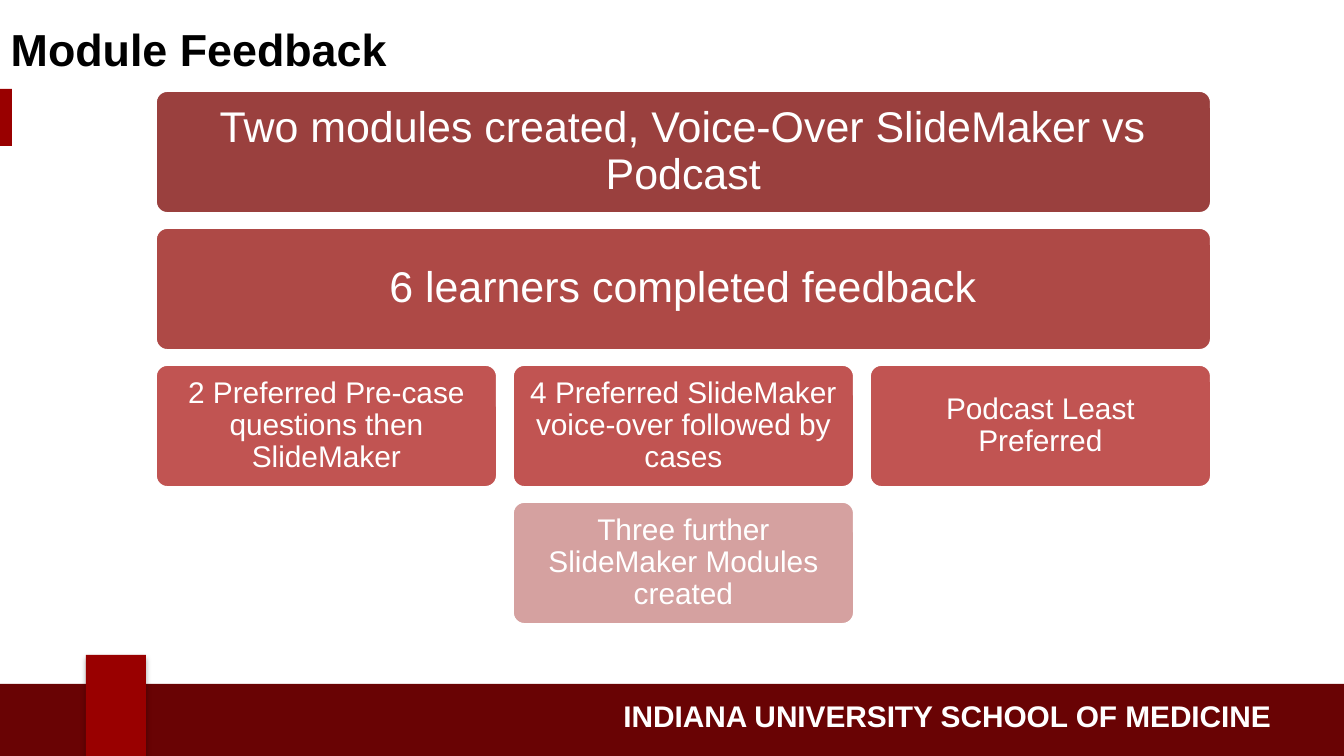
import pptx
import pptx.util
import pptx.dml.color
import pptx.enum.shapes
import pptx.enum.text
import lxml.etree

PX = 914400 / 134.4
KIND = pptx.enum.shapes.MSO_SHAPE
ALIGN = pptx.enum.text.PP_ALIGN
ANCHOR = pptx.enum.text.MSO_ANCHOR

TITLE = "Module Feedback"
FOOTER = "INDIANA UNIVERSITY SCHOOL OF MEDICINE"
CARDS = [
    (0, 0, 3, "9A403E", "Two modules created, Voice-Over SlideMaker vs Podcast"),
    (1, 0, 3, "AE4946", "6 learners completed feedback"),
    (2, 0, 1, "C15452", "2 Preferred Pre-case questions then SlideMaker"),
    (3, 1, 1, "D5A1A0", "Three further SlideMaker Modules created"),
    (2, 1, 1, "C15452", "4 Preferred SlideMaker voice-over followed by cases"),
    (2, 2, 1, "C15452", "Podcast Least Preferred"),
]
LEFT, TOP = 155, 90
WIDE, HIGH = 343, 124
GAP = 14
ROW = 137

SHADOW = """<a:effectLst xmlns:a="http://schemas.openxmlformats.org/drawingml/2006/main">
<a:outerShdw blurRad="39370" dist="22860" dir="5400000" rotWithShape="0">
<a:srgbClr val="000000"><a:alpha val="35000"/></a:srgbClr>
</a:outerShdw></a:effectLst>"""


def emu(*sizes):
    return [round(size * PX) for size in sizes]


def color(code):
    return pptx.dml.color.RGBColor.from_string(code)


def write(shape, text, size=16, tint="FFFFFF", bold=False, align=ALIGN.CENTER,
          anchor=ANCHOR.MIDDLE, inset=None, space=1.0):
    frame = shape.text_frame
    frame.word_wrap = True
    frame.auto_size = pptx.enum.text.MSO_AUTO_SIZE.NONE
    frame.vertical_anchor = anchor
    if inset is not None:
        frame.margin_left = frame.margin_right = emu(inset)[0]
        frame.margin_top = frame.margin_bottom = emu(inset)[0]
    frame.text = text
    line = frame.paragraphs[0]
    line.alignment = align
    line.line_spacing = space
    font = line.runs[0].font
    font.name = "Arial"
    font.size = pptx.util.Pt(size)
    font.bold = bold
    font.color.rgb = color(tint)


def block(slide, place, fill, kind=KIND.RECTANGLE):
    shape = slide.shapes.add_shape(kind, *emu(*place))
    shape.shadow.inherit = False
    shape.fill.solid()
    shape.fill.fore_color.rgb = color(fill)
    shape.line.fill.background()
    return shape


def frame(slide):
    block(slide, (0, 89, 12, 57), "990000")
    block(slide, (-4, 684, 1356, 74), "690304")
    label = slide.shapes.add_textbox(*emu(379, 691, 906, 50))
    write(label, FOOTER, bold=True, align=ALIGN.RIGHT)
    tab = block(slide, (86, 655, 60, 102), "990000")
    props = tab.element.spPr
    props.remove(props.find("{*}effectLst"))
    props.append(lxml.etree.fromstring(SHADOW))


def card(slide, row, col, span, fill, text):
    place = (LEFT + col * (WIDE + GAP), TOP + row * ROW,
             span * (WIDE + GAP) - GAP, HIGH)
    shape = block(slide, place, fill, KIND.ROUNDED_RECTANGLE)
    shape.adjustments[0] = 0.1
    shape.line.color.rgb = color("FFFFFF")
    shape.line.width = pptx.util.Pt(2)
    large = span > 1
    write(shape, text, size=23 if large else 16, inset=13 if large else 9, space=0.9)


def main():
    deck = pptx.Presentation()
    deck.slide_width, deck.slide_height = emu(1344, 756)
    slide = deck.slides.add_slide(deck.slide_layouts[5])
    title = slide.shapes.title
    title.left, title.top, title.width, title.height = emu(-144, 15, 544, 38)
    write(title, TITLE, size=24, tint="000000", bold=True,
          align=ALIGN.RIGHT, anchor=ANCHOR.TOP)
    frame(slide)
    for item in CARDS:
        card(slide, *item)
    deck.save("out.pptx")


if __name__ == "__main__":
    main()
